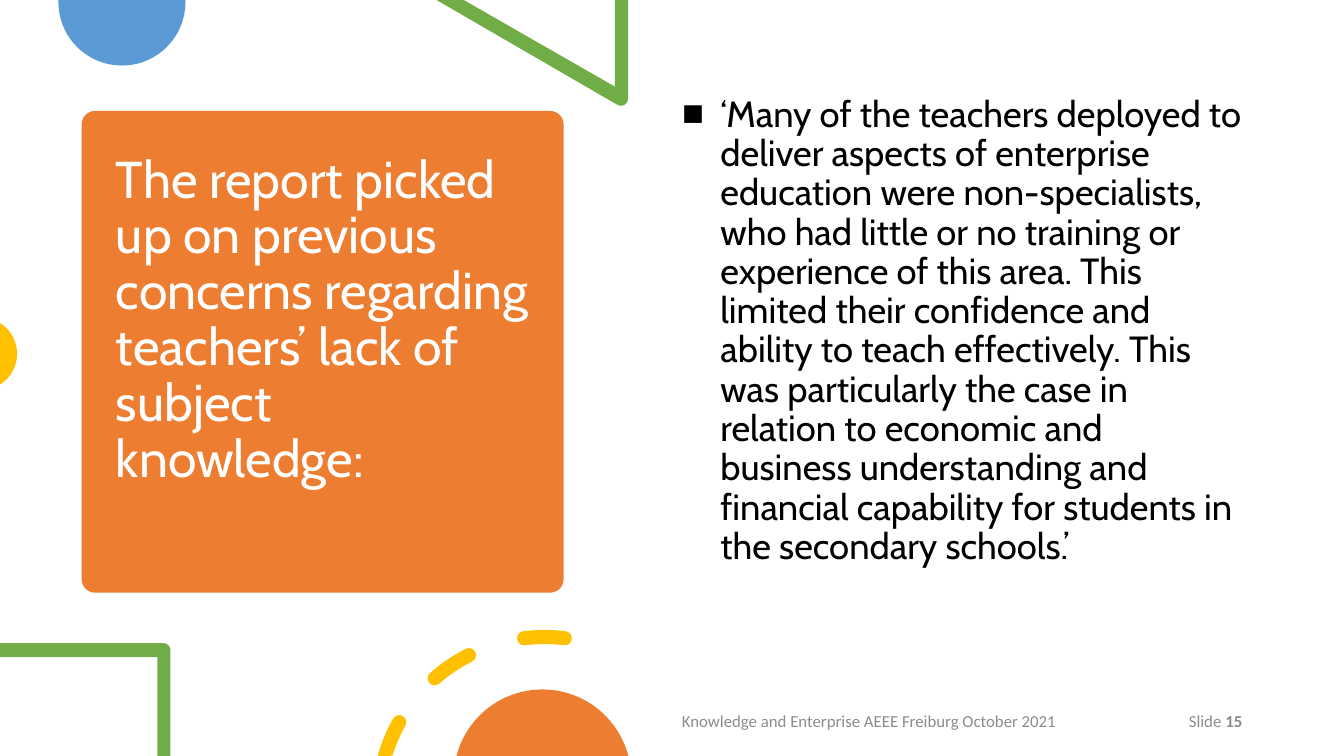
"""Build the slide on teachers' lack of subject knowledge."""
from math import ceil, cos, radians, sin, tan

from lxml.etree import SubElement
from pptx import Presentation
from pptx.dml.color import RGBColor
from pptx.enum.shapes import MSO_SHAPE as Shape
from pptx.enum.text import MSO_ANCHOR as Anchor, MSO_AUTO_SIZE as Fit, PP_ALIGN as Align
from pptx.oxml.ns import qn
from pptx.util import Inches, Pt

WIDE, HIGH = 13.33, 7.5
HEX = {"orange": "ED7D31", "blue": "5B9BD5", "green": "70AD47",
       "gold": "FFC000", "white": "FFFFFF", "black": "000000", "grey": "8C8C8C"}

TITLE = "The report picked up on previous concerns regarding teachers’ lack of subject knowledge:"
QUOTE = ("‘Many of the teachers deployed to deliver aspects of enterprise education were "
         "non-specialists, who had little or no training or experience of this area. This "
         "limited their confidence and ability to teach effectively. This was particularly "
         "the case in relation to economic and business understanding and financial "
         "capability for students in the secondary schools.’")
FOOTER = "Knowledge and Enterprise AEEE Freiburg October 2021"
NUMBER = ("Slide ", "15")

CARD = (0.81, 1.1, 4.78, 4.78)
LEFT, RIGHT = WIDE / 2, 12.42
FOOT, ROW = 6.95, 0.4
RING = (5.4, 7.97)
RADIUS, HALF = 1.65, 0.07
DASHES = [(228.7, 243), (263, 277)]
LAST = 209.2


def spot(mid, size, turn):
    """Return the point of a circle at an angle in degrees clockwise from the right."""
    return mid[0] + size * cos(radians(turn)), mid[1] + size * sin(radians(turn))


def arc(mid, size, start, end):
    """Return a start point, then Bezier curves of at most a quarter turn."""
    count = ceil(abs(end - start) / 90)
    step = (end - start) / count
    pull = size * 4 / 3 * tan(radians(step) / 4)
    steps = [(spot(mid, size, start),)]
    for i in range(count):
        here, there = start + i * step, start + (i + 1) * step
        goal = spot(mid, size, there)
        steps.append((spot(spot(mid, size, here), pull, here + 90),
                      spot(goal, -pull, there + 90), goal))
    return steps


def cap(turn, start):
    """Return the round end of a dash at one angle of the ring."""
    return arc(spot(RING, RADIUS, turn), HALF, start, start + 180)[1:]


def dash(start, end):
    """Return the outline of a dash with two round ends."""
    return (arc(RING, RADIUS + HALF, start, end) + cap(end, end)
            + arc(RING, RADIUS - HALF, end, start)[1:] + cap(start, start + 180))


def dots(*points):
    """Return straight steps through the points."""
    return [(point,) for point in points]


def paint(shape, color):
    """Give a shape a flat fill, no line and no shadow."""
    shape.shadow.inherit = False
    shape.fill.solid()
    shape.fill.fore_color.rgb = RGBColor.from_string(HEX[color])
    shape.line.fill.background()


def draw(color, *loops):
    """Draw closed outlines of lines and curves as one freeform."""
    flat = [[(Inches(x), Inches(y)) for step in loop for x, y in step] for loop in loops]
    pen = slide.shapes.build_freeform(*flat[0][0], scale=1.0)
    for i, points in enumerate(flat):
        if i:
            pen.move_to(*points[0])
        pen.add_line_segments(points[1:], close=True)
    shape = pen.convert_to_shape()
    lines = iter(list(shape._element.iter(qn("a:lnTo"))))
    for step in [step for loop in loops for step in loop[1:]]:
        first, *rest = [next(lines) for _ in step]
        if rest:
            first.tag = qn("a:cubicBezTo")
        for line in rest:
            first.append(line[0])
            line.getparent().remove(line)
    paint(shape, color)


def write(shape, at, *runs, size=12, font="Calibri", color="grey", align=Align.LEFT,
          anchor=Anchor.MIDDLE, line=1.0, before=0, after=0, low=0.05, bold=()):
    """Place a text shape and fill its one paragraph with formatted runs."""
    shape.left, shape.top, shape.width, shape.height = map(Inches, at)
    frame = shape.text_frame
    frame.word_wrap, frame.auto_size = True, Fit.NONE
    frame.vertical_anchor, frame.margin_bottom = anchor, Inches(low)
    para = frame.paragraphs[0]
    para.alignment, para.line_spacing = align, line
    para.space_before, para.space_after = Pt(before), Pt(after)
    for i, words in enumerate(runs):
        run = para.add_run()
        run.text = words
        run.font.size, run.font.name, run.font.bold = Pt(size), font, i in bold
        run.font.color.rgb = RGBColor.from_string(HEX[color])
    return para


def bullet(para, mark, indent):
    """Set a bullet mark with a hanging indent."""
    props = para._p.get_or_add_pPr()
    props.set("marL", str(Inches(indent)))
    props.set("indent", str(-Inches(indent)))
    SubElement(props, qn("a:buFont")).set("typeface", "Arial")
    SubElement(props, qn("a:buChar")).set("char", mark)


deck = Presentation()
deck.slide_width, deck.slide_height = Inches(WIDE), Inches(HIGH)
slide = deck.slides.add_slide(deck.slide_layouts[1])
title, body = slide.placeholders

card = slide.shapes.add_shape(Shape.ROUNDED_RECTANGLE, *map(Inches, CARD))
card.adjustments[0] = 0.028
paint(card, "orange")
slide.shapes._spTree.insert(2, card._element)

write(title, (1.05, 1.22, 4.31, 4.56), TITLE, size=37, font="Cabin", color="white",
      line=0.9, low=0.68)
quote = write(body, (LEFT, 0.9, RIGHT - LEFT, 5.35), QUOTE, size=26, font="Cabin",
              color="black", anchor=Anchor.TOP, line=0.9, before=10)
bullet(quote, "■", 0.38)

draw("blue", dots((0.58, 0)) + arc((1.21, 0.02), 0.63, 180, 0) + dots((1.84, 0)))
draw("green", dots((6.23, 0), (6.1, 0), (6.1, 0.86), (4.6, 0), (4.33, 0))
     + arc((6.16, 0.98), 0.07, 120, 0))
draw("gold", arc((-0.19, 3.51), 0.36, -58, 58))
draw("green", dots((0, 6.38)) + arc((1.62, 6.45), 0.07, 270, 360)
     + dots((1.69, HIGH), (1.56, HIGH), (1.56, 6.52), (0, 6.52)))
cut = (arc(RING, RADIUS + HALF, 195.8, LAST) + cap(LAST, LAST)
       + arc(RING, RADIUS - HALF, LAST, 197.4)[1:])
draw("gold", cut, *[dash(*ends) for ends in DASHES])
draw("orange", arc((5.38, 7.72), 0.88, 194.5, 345.5))

for left, width, runs, style in [
        (LEFT, 4.71, [FOOTER], {}),
        (11.49, RIGHT - 11.49, NUMBER, {"align": Align.RIGHT, "bold": (1,)})]:
    box = slide.shapes.add_textbox(0, 0, 0, 0)
    write(box, (left, FOOT, width, ROW), *runs, after=6, **style)

deck.save("out.pptx")
